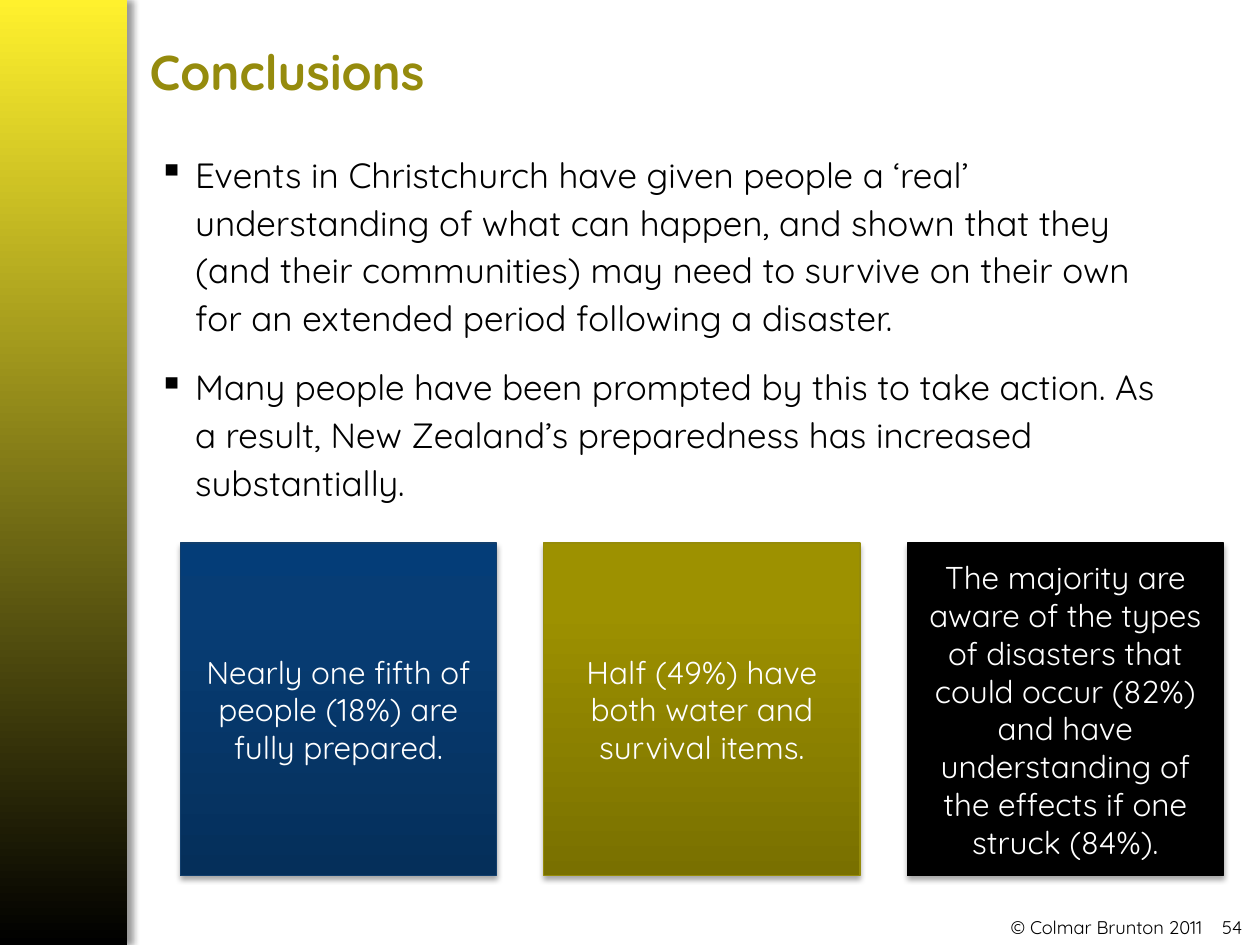
from lxml import etree
from pptx import Presentation
from pptx.dml.color import RGBColor
from pptx.enum.shapes import MSO_SHAPE as Shape
from pptx.enum.text import MSO_ANCHOR as Anchor, PP_ALIGN as Align
from pptx.oxml.ns import qn
from pptx.util import Inches, Pt

FONT = "Quicksand"
COLORS = {
    "black": "000000",
    "white": "FFFFFF",
    "yellow": "FFF12D",
    "title": "958B0D",
    "blue_line": "113E6C",
    "olive_line": "958B09",
}
BLUE_STOPS = [(0, "052F5A"), (80, "073D75"), (100, "043D78")]
OLIVE_STOPS = [(0, "797000"), (80, "9D9100"), (100, "9E9200")]
RAIL_STOPS = [(0, COLORS["yellow"]), (100, COLORS["black"])]
BLACK_STOPS = [(0, COLORS["black"]), (100, COLORS["black"])]

BULLETS = [
    "Events in Christchurch have given people a ‘real’ understanding of what "
    "can happen, and shown that they (and their communities) may need to "
    "survive on their own for an extended period following a disaster.",
    "Many people have been prompted by this to take action. As a result, "
    "New Zealand’s preparedness has increased substantially.",
]
FINDINGS = [
    ("Nearly one fifth of people (18%) are fully prepared.",
     BLUE_STOPS, COLORS["blue_line"]),
    ("Half (49%) have both water and survival items.",
     OLIVE_STOPS, COLORS["olive_line"]),
    ("The majority are aware of the types of disasters that could occur (82%) "
     "and have understanding of the effects if one struck (84%).",
     BLACK_STOPS, COLORS["black"]),
]


def add_child(parent, tag, **attributes):
    child = etree.SubElement(parent, qn(tag))
    for name, value in attributes.items():
        child.set(name, str(value))
    return child


def style_text(para, size, color, bold=False):
    for span in para.runs:
        span.font.name = FONT
        span.font.size = Pt(size)
        span.font.bold = bold
        span.font.color.rgb = RGBColor.from_string(color)


def add_text(page, left, top, width, height, text):
    box = page.shapes.add_textbox(
        Inches(left), Inches(top), Inches(width), Inches(height))
    box.text_frame.word_wrap = True
    box.text_frame.text = text
    return box.text_frame


def set_tab(para, position, align):
    tabs = add_child(para._p.get_or_add_pPr(), "a:tabLst")
    add_child(tabs, "a:tab", pos=Inches(position), algn=align)


def set_gradient(shape, stops, angle):
    shape.fill.gradient()
    shape.fill.gradient_angle = angle
    stop_list = shape._element.spPr.find(".//" + qn("a:gsLst"))
    for stop in list(stop_list):
        stop_list.remove(stop)
    for position, color in stops:
        stop = add_child(stop_list, "a:gs", pos=position * 1000)
        add_child(stop, "a:srgbClr", val=color)


def set_shadow(shape, opacity, blur, distance, angle):
    shape.shadow.inherit = False
    effects = shape._element.spPr.find(qn("a:effectLst"))
    shadow = add_child(effects, "a:outerShdw", blurRad=Pt(blur),
                       dist=Pt(distance), dir=angle * 60000, rotWithShape=0)
    color = add_child(shadow, "a:srgbClr", val=COLORS["black"])
    add_child(color, "a:alpha", val=opacity * 1000)


def add_panel(page, left, top, width, height, stops, angle):
    panel = page.shapes.add_shape(
        Shape.RECTANGLE, Inches(left), Inches(top), Inches(width), Inches(height))
    set_gradient(panel, stops, angle)
    return panel


def add_rail(page):
    rail = add_panel(page, 0, 0, 1.01, 7.5, RAIL_STOPS, 270)
    rail.line.fill.background()
    set_shadow(rail, 40, 4, 3, 0)


def add_footer(page):
    frame = add_text(page, 6.42, 7.22, 3.55, 0.29, "© Colmar Brunton 2011\t54")
    frame.margin_left = Inches(1.6)
    para = frame.paragraphs[0]
    set_tab(para, 1.84, "r")
    style_text(para, 10.5, COLORS["black"])


def add_title(page):
    frame = add_text(page, 1.09, 0.1, 6.83, 0.93, "Conclusions")
    frame.vertical_anchor = Anchor.MIDDLE
    style_text(frame.paragraphs[0], 28, COLORS["title"], bold=True)


def add_bullets(page):
    frame = add_text(page, 1.16, 1.12, 8.32, 2.95, "\n".join(BULLETS))
    for para in frame.paragraphs:
        properties = para._p.get_or_add_pPr()
        properties.set("marL", str(Inches(0.29)))
        properties.set("indent", str(Inches(-0.29)))
        add_child(properties, "a:buChar", char="▪")
        set_tab(para, 0.49, "l")
        para.line_spacing = 1.14
        para.space_after = Pt(12)
        style_text(para, 20, COLORS["black"])


def add_finding(page, left, text, stops, line_color):
    card = add_panel(page, left, 4.31, 2.51, 2.64, stops, 90)
    card.line.color.rgb = RGBColor.from_string(line_color)
    card.line.width = Pt(0.75)
    set_shadow(card, 35, 3.1, 1.8, 90)
    frame = card.text_frame
    frame.word_wrap = True
    frame.vertical_anchor = Anchor.MIDDLE
    frame.text = text
    para = frame.paragraphs[0]
    para.alignment = Align.CENTER
    style_text(para, 18, COLORS["white"])


def main():
    deck = Presentation()
    deck.slide_width, deck.slide_height = Inches(10), Inches(7.5)
    page = deck.slides.add_slide(deck.slide_layouts[6])
    add_footer(page)
    add_rail(page)
    add_title(page)
    add_bullets(page)
    for index, (text, stops, line_color) in enumerate(FINDINGS):
        add_finding(page, 1.43 + index * 2.885, text, stops, line_color)
    deck.save("out.pptx")


if __name__ == "__main__":
    main()
